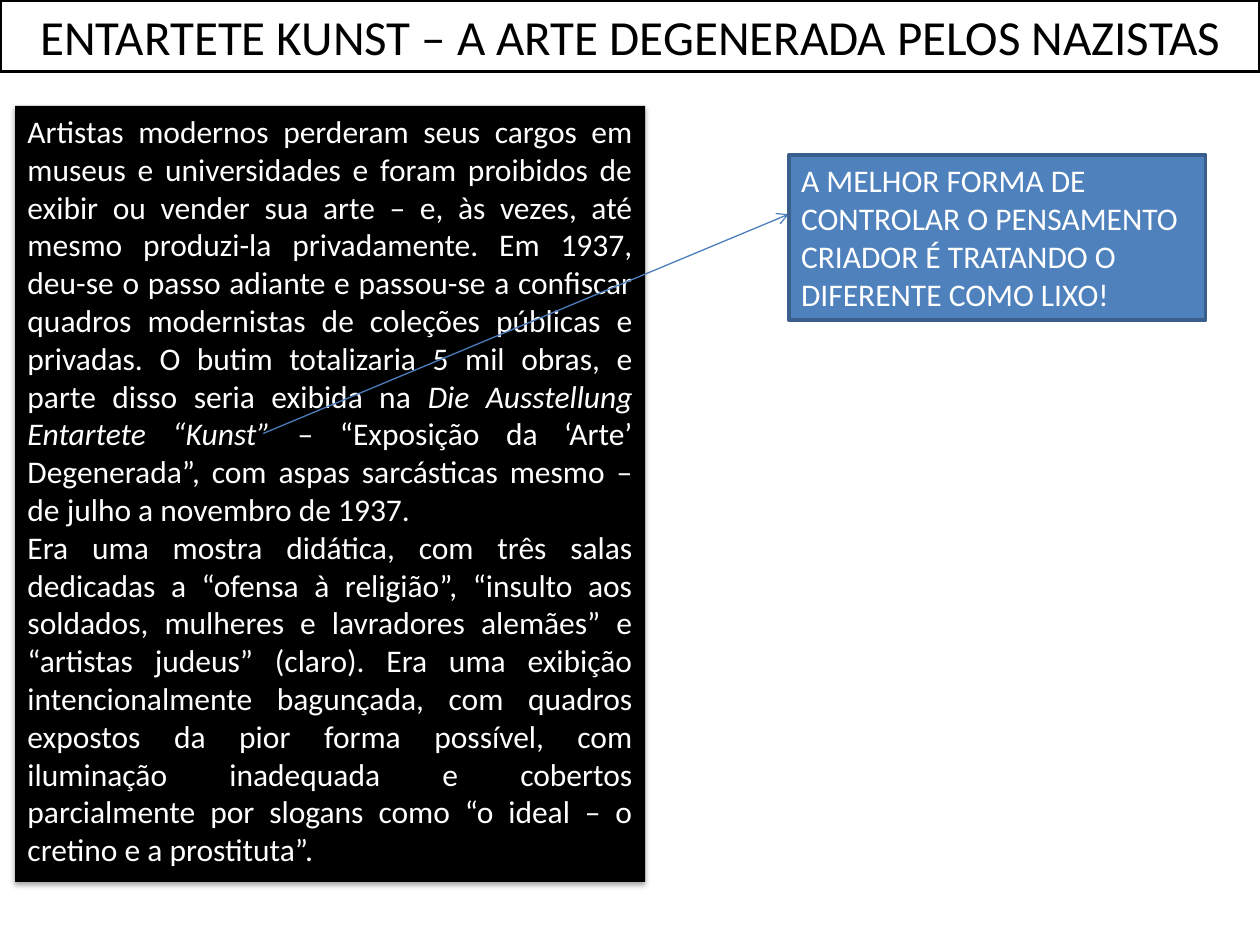
"""Build a slide on the Entartete Kunst exhibition with a commented passage."""
from lxml import etree
from pptx import Presentation
from pptx.dml.color import RGBColor
from pptx.enum.shapes import MSO_CONNECTOR, MSO_SHAPE
from pptx.enum.text import MSO_ANCHOR, PP_ALIGN
from pptx.oxml import parse_xml
from pptx.oxml.ns import nsdecls, qn
from pptx.util import Inches, Pt

RECTANGLE = MSO_SHAPE.RECTANGLE
STRAIGHT = MSO_CONNECTOR.STRAIGHT
TOP = MSO_ANCHOR.TOP
LEFT, CENTER, JUSTIFY = PP_ALIGN.LEFT, PP_ALIGN.CENTER, PP_ALIGN.JUSTIFY

BLACK = RGBColor(0x00, 0x00, 0x00)
WHITE = RGBColor(0xFF, 0xFF, 0xFF)
BLUE = RGBColor(0x4F, 0x81, 0xBD)
DARK_BLUE = RGBColor(0x3A, 0x5F, 0x8C)
ARROW_BLUE = RGBColor(0x4B, 0x7E, 0xBC)
FONT = "Calibri"

ARTICLE = [
    [
        ("Artistas modernos perderam seus cargos em museus e universidades e foram "
         "proibidos de exibir ou vender sua arte – e, às vezes, até mesmo produzi-la "
         "privadamente. Em 1937, deu-se o passo adiante e passou-se a confiscar quadros "
         "modernistas de coleções públicas e privadas. O butim totalizaria 5 mil obras, "
         "e parte disso seria exibida na ", False),
        ("Die Ausstellung Entartete “Kunst”", True),
        (" – “Exposição da ‘Arte’ Degenerada”, com aspas sarcásticas mesmo – de julho a "
         "novembro de 1937.", False),
    ],
    [
        ("Era uma mostra didática, com três salas dedicadas a “ofensa à religião”, "
         "“insulto aos soldados, mulheres e lavradores alemães” e “artistas judeus” "
         "(claro). Era uma exibição intencionalmente bagunçada, com quadros expostos da "
         "pior forma possível, com iluminação inadequada e cobertos parcialmente por "
         "slogans como “o ideal – o cretino e a prostituta”.", False),
    ],
]
TITLE = [[("ENTARTETE KUNST – A ARTE DEGENERADA PELOS NAZISTAS", False)]]
COMMENT = [[("A MELHOR FORMA DE CONTROLAR O PENSAMENTO CRIADOR É TRATANDO O "
             "DIFERENTE COMO LIXO!", False)]]

ARTICLE_AREA = (0.12, 0.84, 5, 6.16)
TITLE_AREA = (0, 0, 10, 0.57)
COMMENT_AREA = (6.26, 1.23, 3.31, 1.31)
ARROW_START, ARROW_END = (2.09, 3.44), (COMMENT_AREA[0], 1.7)


def add_panel(page, area, paragraphs, fill, color, size, align, outline=None):
    box = page.shapes.add_shape(RECTANGLE, *map(Inches, area))
    box.shadow.inherit = False
    box.fill.solid()
    box.fill.fore_color.rgb = fill
    if outline is None:
        box.line.fill.background()
    else:
        box.line.color.rgb = outline
        box.line.width = Pt(2)
    frame = box.text_frame
    frame.word_wrap = True
    frame.vertical_anchor = TOP
    for index, spans in enumerate(paragraphs):
        para = frame.add_paragraph() if index else frame.paragraphs[0]
        para.alignment = align
        for text, italic in spans:
            span = para.add_run()
            span.text = text
            span.font.name = FONT
            span.font.size = Pt(size)
            span.font.italic = italic
            span.font.color.rgb = color
    return box


def add_soft_shadow(box):
    effects = box._element.spPr.find(qn("a:effectLst"))
    effects.append(parse_xml(
        f'<a:outerShdw {nsdecls("a")} blurRad="{Pt(3.1)}" dist="{Pt(1.8)}" '
        'dir="5400000" rotWithShape="0"><a:srgbClr val="000000">'
        '<a:alpha val="35000"/></a:srgbClr></a:outerShdw>'))


def add_arrow(page, start, end):
    arrow = page.shapes.add_connector(STRAIGHT, *map(Inches, start + end))
    arrow.line.color.rgb = ARROW_BLUE
    arrow.line.width = Pt(0.75)
    etree.SubElement(arrow.line._get_or_add_ln(), qn("a:tailEnd"), type="arrow")
    etree.SubElement(arrow._element.spPr, qn("a:effectLst"))


def main():
    deck = Presentation()
    deck.slide_width, deck.slide_height = Inches(10), Inches(7.5)
    page = deck.slides.add_slide(deck.slide_layouts[6])
    article = add_panel(page, ARTICLE_AREA, ARTICLE, BLACK, WHITE, 18, JUSTIFY)
    add_soft_shadow(article)
    add_panel(page, TITLE_AREA, TITLE, WHITE, BLACK, 28, CENTER, BLACK)
    add_arrow(page, ARROW_START, ARROW_END)
    add_panel(page, COMMENT_AREA, COMMENT, BLUE, WHITE, 18, LEFT, DARK_BLUE)
    deck.save("out.pptx")


if __name__ == "__main__":
    main()
